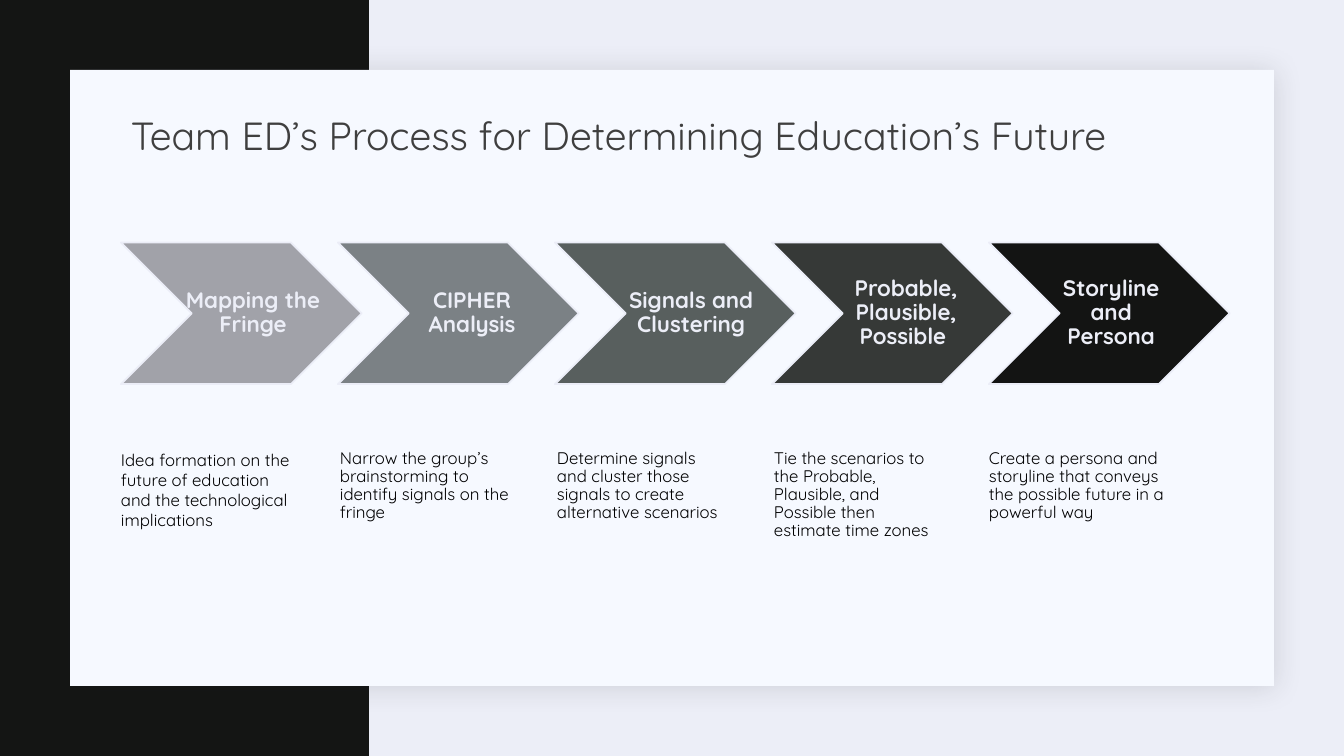
from lxml.etree import SubElement
from pptx import Presentation
from pptx.dml.color import RGBColor
from pptx.enum.shapes import MSO_SHAPE as SHAPE
from pptx.enum.text import MSO_ANCHOR as ANCHOR, PP_ALIGN as ALIGN
from pptx.oxml.ns import qn
from pptx.util import Pt

FONT = "Quicksand"
STEP_LEFT, STEP_PITCH = 86.4, 155
CHEVRON_TOP, CHEVRON_WIDTH, CHEVRON_HEIGHT = 173.2, 172, 101.2

# chevron fill, label, label offset, label width,
# description, description left inset, right inset, line spacing
STEPS = [
    ("A1A2A9", "Mapping the Fringe", 41, 103,
     "Idea formation on the future of education and the technological implications",
     0, 14.4, 1),
    ("7B8185", "CIPHER Analysis", 42.5, 103,
     "Narrow the group’s brainstorming to identify signals on the fringe",
     1.44, 0, 0.9),
    ("585F5E", "Signals and Clustering", 44, 103,
     "Determine signals and cluster those signals to create alternative scenarios",
     1.44, 14.4, 0.9),
    ("363937", "Probable, Plausible, Possible ", 34, 120,
     "Tie the scenarios to the Probable, Plausible, and Possible then estimate time zones",
     1.44, 14.4, 0.9),
    ("131413", "Storyline and Persona", 36, 99,
     "Create a persona and storyline that conveys the possible future in a powerful way",
     0, 0, 0.9),
]

prs = Presentation()
prs.slide_width, prs.slide_height = Pt(960), Pt(540)
slide = prs.slides.add_slide(prs.slide_layouts[6])
slide.background.fill.solid()
slide.background.fill.fore_color.rgb = RGBColor.from_string("ECEEF7")


def add_filled(kind, left, top, width, height, color, line=None):
    shape = slide.shapes.add_shape(kind, Pt(left), Pt(top), Pt(width), Pt(height))
    shape.shadow.inherit = False
    shape.fill.solid()
    shape.fill.fore_color.rgb = RGBColor.from_string(color)
    if line:
        shape.line.color.rgb = RGBColor.from_string(line)
        shape.line.width = Pt(1.25)
    else:
        shape.line.fill.background()
    return shape


def add_text(text, box, size, color, insets, spacing=0.9, bold=False,
             align=ALIGN.LEFT, anchor=ANCHOR.MIDDLE):
    """Place one paragraph; box is left, top, width, height and insets left, top, right, bottom."""
    frame = slide.shapes.add_textbox(*map(Pt, box)).text_frame
    frame.word_wrap = True
    frame.vertical_anchor = anchor
    (frame.margin_left, frame.margin_top,
     frame.margin_right, frame.margin_bottom) = map(Pt, insets)
    paragraph = frame.paragraphs[0]
    paragraph.text = text
    paragraph.alignment = align
    paragraph.line_spacing = spacing
    font = paragraph.runs[0].font
    font.name, font.size, font.bold = FONT, Pt(size), bold
    font.color.rgb = RGBColor.from_string(color)


# Side band and card with a soft shadow
add_filled(SHAPE.RECTANGLE, 0, 0, 263.5, 540, "141514")
card = add_filled(SHAPE.RECTANGLE, 50, 50, 860, 440, "F6F9FF")
effects = card._element.spPr.find(qn("a:effectLst"))
shadow = SubElement(effects, qn("a:outerShdw"), blurRad=str(Pt(20)),
                    dist=str(Pt(2)), dir="2700000", algn="tl", rotWithShape="0")
shadow_color = SubElement(shadow, qn("a:srgbClr"), val="1F2125")
SubElement(shadow_color, qn("a:alpha"), val="15000")

add_text("Team ED’s Process for Determining Education’s Future",
         (86.4, 75.5, 792, 46), 28, "3F3F3F", (7.2, 3.6, 7.2, 3.6))

# Process steps
for i, (fill, label, label_offset, label_width,
        description, inset_left, inset_right, spacing) in enumerate(STEPS):
    left = STEP_LEFT + i * STEP_PITCH
    chevron = add_filled(SHAPE.CHEVRON, left, CHEVRON_TOP, CHEVRON_WIDTH,
                         CHEVRON_HEIGHT, fill, line="EBEDF7")
    chevron.adjustments[0] = 0.5
    add_text(label, (left + label_offset, CHEVRON_TOP, label_width, CHEVRON_HEIGHT),
             16, "ECEEF7", (5, 1.4, 1.4, 1.4), bold=True, align=ALIGN.CENTER)
    add_text(description, (left, 287.3, 137.5, 135.4), 12, "000000",
             (inset_left, 33.8, inset_right, 0), spacing, anchor=ANCHOR.TOP)

prs.save("out.pptx")
